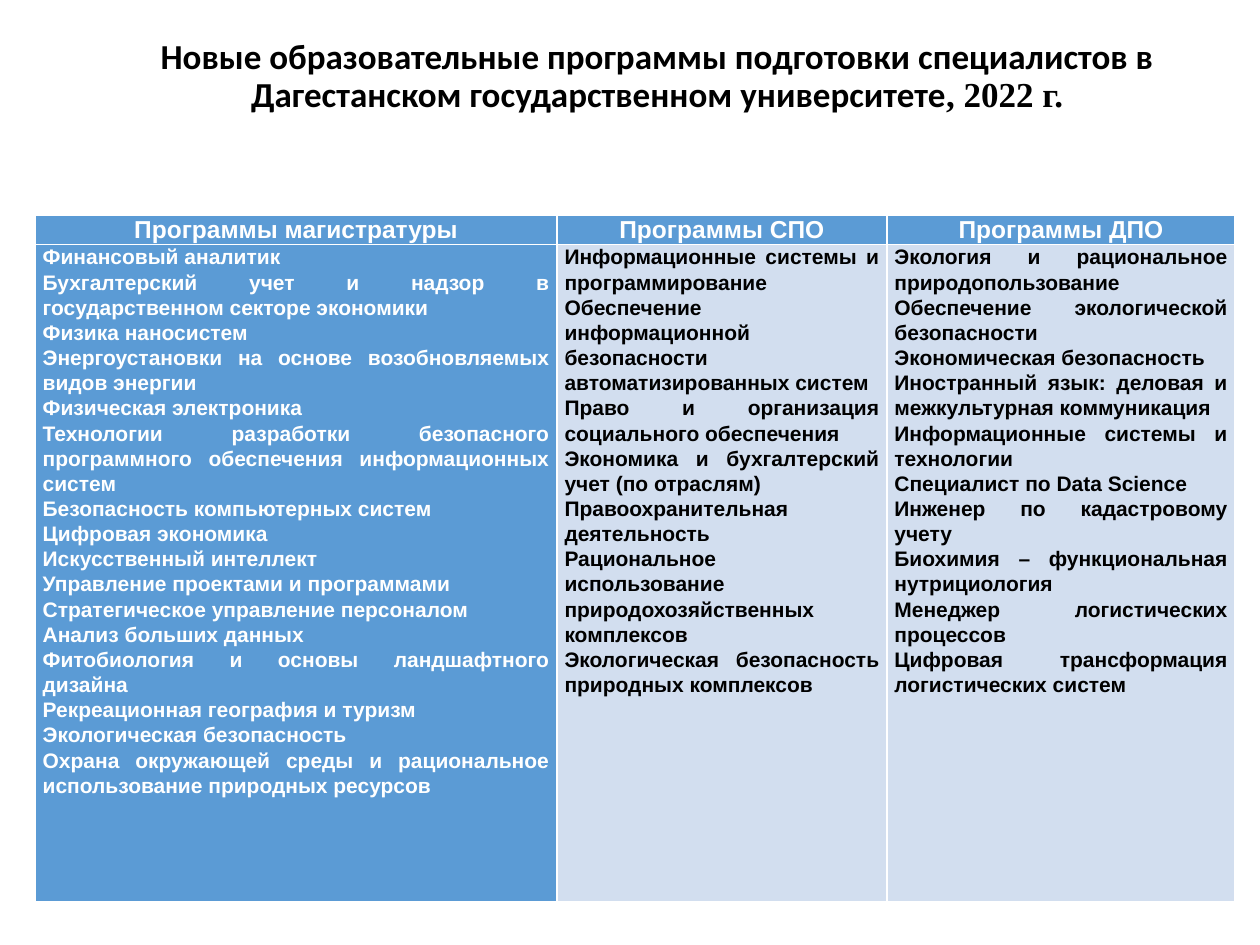
from pptx import Presentation
from pptx.dml.color import RGBColor
from pptx.enum.text import MSO_ANCHOR, PP_ALIGN
from pptx.util import Cm, Pt

WHITE = RGBColor(0xFF, 0xFF, 0xFF)
BLACK = RGBColor(0, 0, 0)
BLUE = RGBColor(0x5B, 0x9B, 0xD5)
PALE_BLUE = RGBColor(0xD2, 0xDE, 0xEF)

TITLE_RUNS = [
    ("Новые образовательные программы подготовки специалистов в "
     "Дагестанском государственном университете", "Calibri"),
    (", 2022 г.", "Times New Roman"),
]

COLUMNS = [
    {"heading": "Программы магистратуры", "width": 10.52, "fill": BLUE, "color": WHITE,
     "programs": [
         "Финансовый аналитик",
         "Бухгалтерский учет и надзор в государственном секторе экономики",
         "Физика наносистем",
         "Энергоустановки на основе возобновляемых видов энергии",
         "Физическая электроника",
         "Технологии разработки безопасного программного обеспечения информационных систем",
         "Безопасность компьютерных систем",
         "Цифровая экономика",
         "Искусственный интеллект",
         "Управление проектами и программами",
         "Стратегическое управление персоналом",
         "Анализ больших данных",
         "Фитобиология и основы ландшафтного дизайна",
         "Рекреационная география и туризм",
         "Экологическая безопасность",
         "Охрана окружающей среды и рациональное использование природных ресурсов",
     ]},
    {"heading": "Программы СПО", "width": 6.65, "fill": PALE_BLUE, "color": BLACK,
     "programs": [
         "Информационные системы и программирование",
         "Обеспечение информационной безопасности автоматизированных систем",
         "Право и организация социального обеспечения",
         "Экономика и бухгалтерский учет (по отраслям)",
         "Правоохранительная деятельность",
         "Рациональное использование природохозяйственных комплексов",
         "Экологическая безопасность природных комплексов",
     ]},
    {"heading": "Программы ДПО", "width": 7.02, "fill": PALE_BLUE, "color": BLACK,
     "programs": [
         "Экология и рациональное природопользование",
         "Обеспечение экологической безопасности",
         "Экономическая безопасность",
         "Иностранный язык: деловая и межкультурная коммуникация",
         "Информационные системы и технологии",
         "Специалист по Data Science",
         "Инженер по кадастровому учету",
         "Биохимия – функциональная нутрициология",
         "Менеджер логистических процессов",
         "Цифровая трансформация логистических систем",
     ]},
]
ROW_HEIGHTS = [0.55, 13.26]
CELL_MARGINS = {"margin_left": Cm(0.15), "margin_right": Cm(0.15),
                "margin_top": 0, "margin_bottom": 0}


def set_attributes(target, values):
    for name, value in values.items():
        setattr(target, name, value)


def add_run(paragraph, text, font_name, size, color):
    run = paragraph.add_run()
    run.text = text
    set_attributes(run.font, {"name": font_name, "size": Pt(size), "bold": True})
    run.font.color.rgb = color


def add_title(slide):
    title = slide.shapes.title
    set_attributes(title, {"left": Cm(1.35), "top": Cm(1.27),
                           "width": Cm(22.56), "height": Cm(1.47)})
    # The bottom margin lifts the centred lines above the middle of the box.
    set_attributes(title.text_frame, {"vertical_anchor": MSO_ANCHOR.MIDDLE,
                                      "word_wrap": True, "margin_left": Cm(1.49),
                                      "margin_bottom": Cm(1.04)})
    paragraph = title.text_frame.paragraphs[0]
    set_attributes(paragraph, {"alignment": PP_ALIGN.CENTER, "line_spacing": 0.9,
                               "space_before": Pt(0)})
    for text, font_name in TITLE_RUNS:
        add_run(paragraph, text, font_name, 20, BLACK)


def fill_cell(cell, lines, fill, color, size, alignment):
    set_attributes(cell, CELL_MARGINS)
    cell.fill.solid()
    cell.fill.fore_color.rgb = fill
    frame = cell.text_frame
    for index, line in enumerate(lines):
        paragraph = frame.add_paragraph() if index else frame.paragraphs[0]
        set_attributes(paragraph, {"alignment": alignment, "line_spacing": 1.07})
        add_run(paragraph, line, "Arial", size, color)


def add_program_table(slide):
    width = sum(column["width"] for column in COLUMNS)
    table = slide.shapes.add_table(len(ROW_HEIGHTS), len(COLUMNS), Cm(0.71), Cm(4.33),
                                   Cm(width), Cm(sum(ROW_HEIGHTS))).table
    table.horz_banding = False
    for row, height in zip(table.rows, ROW_HEIGHTS):
        row.height = Cm(height)
    for index, column in enumerate(COLUMNS):
        table.columns[index].width = Cm(column["width"])
        fill_cell(table.cell(0, index), [column["heading"]], BLUE, WHITE, 14,
                  PP_ALIGN.CENTER)
        fill_cell(table.cell(1, index), column["programs"], column["fill"],
                  column["color"], 12, PP_ALIGN.JUSTIFY)


def main():
    presentation = Presentation()
    set_attributes(presentation, {"slide_width": Cm(25.4), "slide_height": Cm(19.05)})
    slide = presentation.slides.add_slide(presentation.slide_layouts[5])
    add_title(slide)
    add_program_table(slide)
    presentation.save("out.pptx")


if __name__ == "__main__":
    main()
